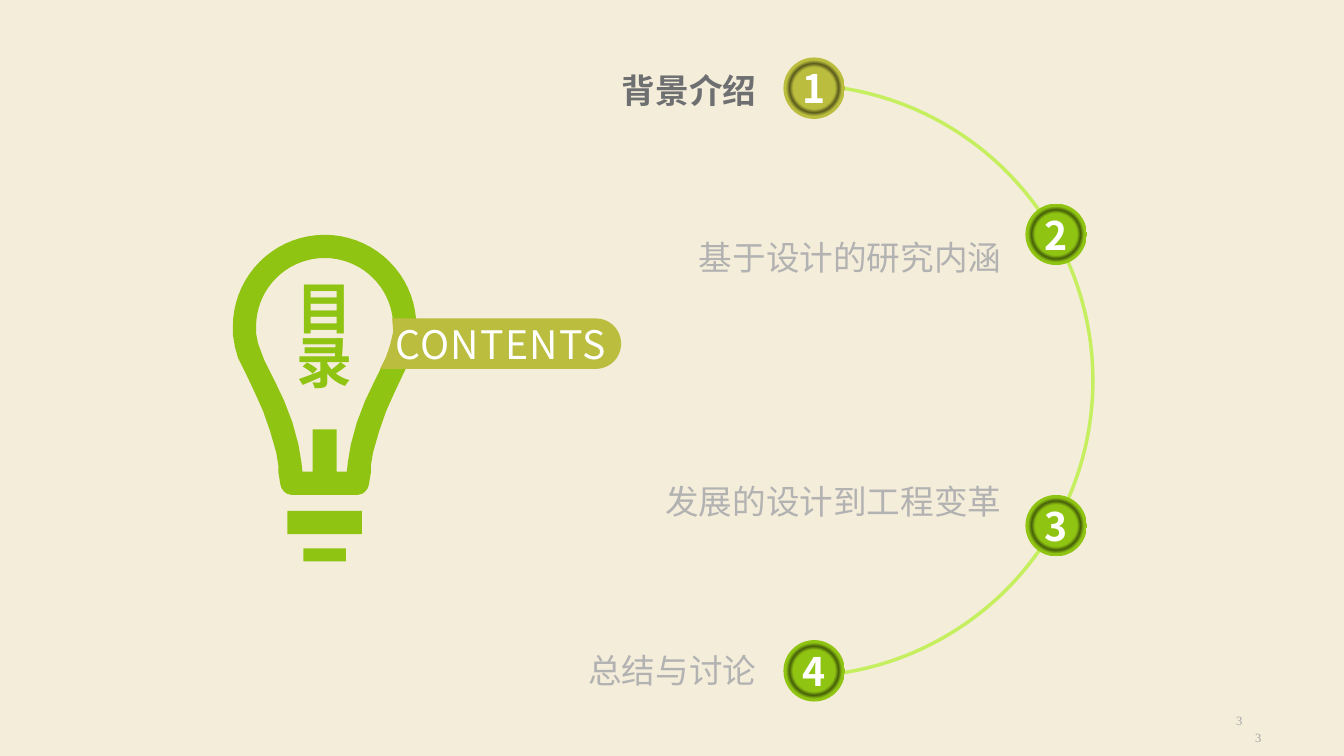
from dataclasses import dataclass
from math import cos, radians, sin

from lxml.etree import SubElement
from pptx import Presentation
from pptx.dml.color import RGBColor
from pptx.enum.shapes import MSO_SHAPE
from pptx.enum.text import MSO_ANCHOR, PP_ALIGN
from pptx.oxml import parse_xml
from pptx.oxml.ns import nsdecls, qn
from pptx.shapes.autoshape import Shape
from pptx.slide import Slide
from pptx.util import Inches, Pt

Point = tuple[float, float]


@dataclass(frozen=True)
class Theme:
    paper: str = "F4EDDA"
    green: str = "90C413"
    moss: str = "486209"
    olive: str = "BABD3D"
    bark: str = "5D5E1F"
    lime: str = "C5EF5E"
    dark: str = "6D6F71"
    pale: str = "B2B2B2"
    grey: str = "A6A6A6"
    white: str = "FFFFFF"
    sans: str = "Noto Sans CJK SC"
    serif: str = "Times New Roman"
    head: int = 40
    mark: int = 28
    item: int = 24
    note: int = 9


@dataclass(frozen=True)
class Entry:
    text: str
    left: float
    top: float
    disc: Point
    live: bool = False


@dataclass(frozen=True)
class Folio:
    left: float
    top: float
    pad: Point


THEME = Theme()
ENTRIES = [
    Entry("背景介绍", 3.77, 0.29, (7.77, 0.57), True),
    Entry("基于设计的研究内涵", 6.2, 1.95, (10.17, 2.02)),
    Entry("发展的设计到工程变革", 6.2, 4.37, (10.17, 4.91)),
    Entry("总结与讨论", 3.77, 6.05, (7.77, 6.35)),
]
FOLIOS = [Folio(9.58, 7.12, (0.07, 0.04)), Folio(9.42, 6.95, (0.1, 0.05))]

# Bulb flanks: distance from the axis, height on the slide
AXIS, HUB = 3.22, 3.24
OUTER = [(0.91, 3.32), (0.89, 3.44), (0.86, 3.55), (0.78, 3.71), (0.69, 3.9),
         (0.61, 4.08), (0.54, 4.28), (0.48, 4.49), (0.46, 4.61), (0.46, 4.68),
         (0.44, 4.8), (0.43, 4.84), (0.4, 4.88), (0.37, 4.9), (0.33, 4.91)]
INNER = [(0.68, 3.31), (0.66, 3.41), (0.6, 3.57), (0.5, 3.77), (0.4, 3.98),
         (0.32, 4.19), (0.26, 4.41), (0.23, 4.59), (0.22, 4.68),
         (0.12, 4.68), (0.12, 4.26)]


def tint(code: str) -> RGBColor:
    return RGBColor.from_string(code)


def write(shape: Shape, text: str, size: int, color: str, align: PP_ALIGN,
          bold: bool = False, face: str = THEME.sans, pad: Point = (0, 0)) -> None:
    frame = shape.text_frame
    frame.text = text
    frame.word_wrap = True
    frame.vertical_anchor = MSO_ANCHOR.MIDDLE
    frame.margin_left = frame.margin_right = Inches(pad[0])
    frame.margin_top = frame.margin_bottom = Inches(pad[1])
    for para in frame.paragraphs:
        para.alignment = align
        for run in para.runs:
            font = run.font
            font.size, font.bold, font.name = Pt(size), bold, face
            font.color.rgb = tint(color)
            SubElement(run._r.get_or_add_rPr(), qn("a:ea")).set("typeface", face)


def label(slide: Slide, box: tuple[float, float, float, float], text: str,
          size: int, color: str, bold: bool = False,
          face: str = THEME.sans, pad: Point = (0.1, 0.05)) -> None:
    shape = slide.shapes.add_textbox(*map(Inches, box))
    write(shape, text, size, color, PP_ALIGN.RIGHT, bold, face, pad)


def sweep(x: float, y: float, radius: float, start: int, end: int) -> list[Point]:
    """Points along a circle, every five degrees."""
    return [(x + radius * cos(radians(a)), y + radius * sin(radians(a)))
            for a in range(start, end + 1, 5)]


def bulb(radius: float, flank: list[Point]) -> list[Point]:
    """Dome plus a flank mirrored about the axis."""
    right = [(AXIS + dx, y) for dx, y in flank]
    left = [(AXIS - dx, y) for dx, y in reversed(flank)]
    return sweep(AXIS, HUB, radius, 180, 360) + right + left


def bar(half: float, top: float, foot: float) -> list[Point]:
    return [(AXIS - half, top), (AXIS + half, top),
            (AXIS + half, foot), (AXIS - half, foot)]


def trace(slide: Slide, loops: list[list[Point]], color: str) -> Shape:
    scaled = [[(Inches(x), Inches(y)) for x, y in loop] for loop in loops]
    pen = slide.shapes.build_freeform(*scaled[0][0], scale=1.0)
    for loop in scaled:
        pen.move_to(*loop[0])
        pen.add_line_segments(loop[1:], close=True)
    shape = pen.convert_to_shape()
    shape.shadow.inherit = False
    shape.fill.solid()
    shape.fill.fore_color.rgb = tint(color)
    shape.line.fill.background()
    return shape


def ring(shape: Shape, base: str, groove: str) -> None:
    """Round gradient with a dark groove near the rim."""
    shape.fill.gradient()
    stops = "".join(
        f'<a:gs pos="{pos}000"><a:srgbClr val="{code}"/></a:gs>'
        for pos, code in [(48, base), (56, groove), (64, base)])
    grad = parse_xml(
        f'<a:gradFill {nsdecls("a")} rotWithShape="1"><a:gsLst>{stops}</a:gsLst>'
        '<a:path path="circle"><a:fillToRect l="50000" t="50000" r="50000" '
        'b="50000"/></a:path></a:gradFill>')
    props = shape._element.spPr
    props.replace(props.find(qn("a:gradFill")), grad)


def disc(slide: Slide, entry: Entry, rank: int) -> None:
    side = Inches(0.61)
    shape = slide.shapes.add_shape(
        MSO_SHAPE.OVAL, *map(Inches, entry.disc), side, side)
    shape.shadow.inherit = False
    shape.line.fill.background()
    pair = (THEME.olive, THEME.bark) if entry.live else (THEME.green, THEME.moss)
    ring(shape, *pair)
    write(shape, str(rank), THEME.mark, THEME.white, PP_ALIGN.CENTER, True)


def heading(slide: Slide) -> None:
    title = slide.shapes.title
    title.left, title.top = Inches(2.62), Inches(2.39)
    title.width, title.height = Inches(1.2), Inches(1.98)
    write(title, "目\n录", THEME.head, THEME.green, PP_ALIGN.CENTER, True)
    for para in title.text_frame.paragraphs:
        para.line_spacing = 0.8


def orbit(slide: Slide) -> None:
    side = Inches(5.87)
    arc = slide.shapes.add_shape(
        MSO_SHAPE.ARC, Inches(4.97), Inches(0.84), side, side)
    arc.shadow.inherit = False
    arc.adjustments[0], arc.adjustments[1] = 270 * 0.6, 90 * 0.6
    arc.fill.background()
    arc.line.color.rgb = tint(THEME.lime)
    arc.line.width = Pt(2.5)


def banner(slide: Slide) -> None:
    edge = [(3.77, 3.66), (3.83, 3.54), (3.87, 3.42), (3.9, 3.29), (3.89, 3.16)]
    shape = trace(slide, [sweep(5.91, 3.41, 0.25, -90, 90) + edge], THEME.olive)
    write(shape, "CONTENTS", THEME.mark, THEME.white, PP_ALIGN.CENTER)
    run = shape.text_frame.paragraphs[0].runs[0]
    run._r.get_or_add_rPr().set("spc", "100")


def main() -> None:
    deck = Presentation()
    deck.slide_width, deck.slide_height = Inches(13.33), Inches(7.5)
    slide = deck.slides.add_slide(deck.slide_layouts[5])
    slide.background.fill.solid()
    slide.background.fill.fore_color.rgb = tint(THEME.paper)
    heading(slide)
    orbit(slide)
    for rank, entry in enumerate(ENTRIES, 1):
        disc(slide, entry, rank)
        label(slide, (entry.left, entry.top, 3.83, 1.2), entry.text, THEME.item,
              THEME.dark if entry.live else THEME.pale, entry.live)
    trace(slide, [bulb(0.91, OUTER), bulb(0.68, INNER),
                  bar(0.37, 5.07, 5.3), bar(0.21, 5.44, 5.57)], THEME.green)
    banner(slide)
    for folio in FOLIOS:
        label(slide, (folio.left, folio.top, 3, 0.4), "3", THEME.note,
              THEME.grey, face=THEME.serif, pad=folio.pad)
    deck.save("out.pptx")


if __name__ == "__main__":
    main()
